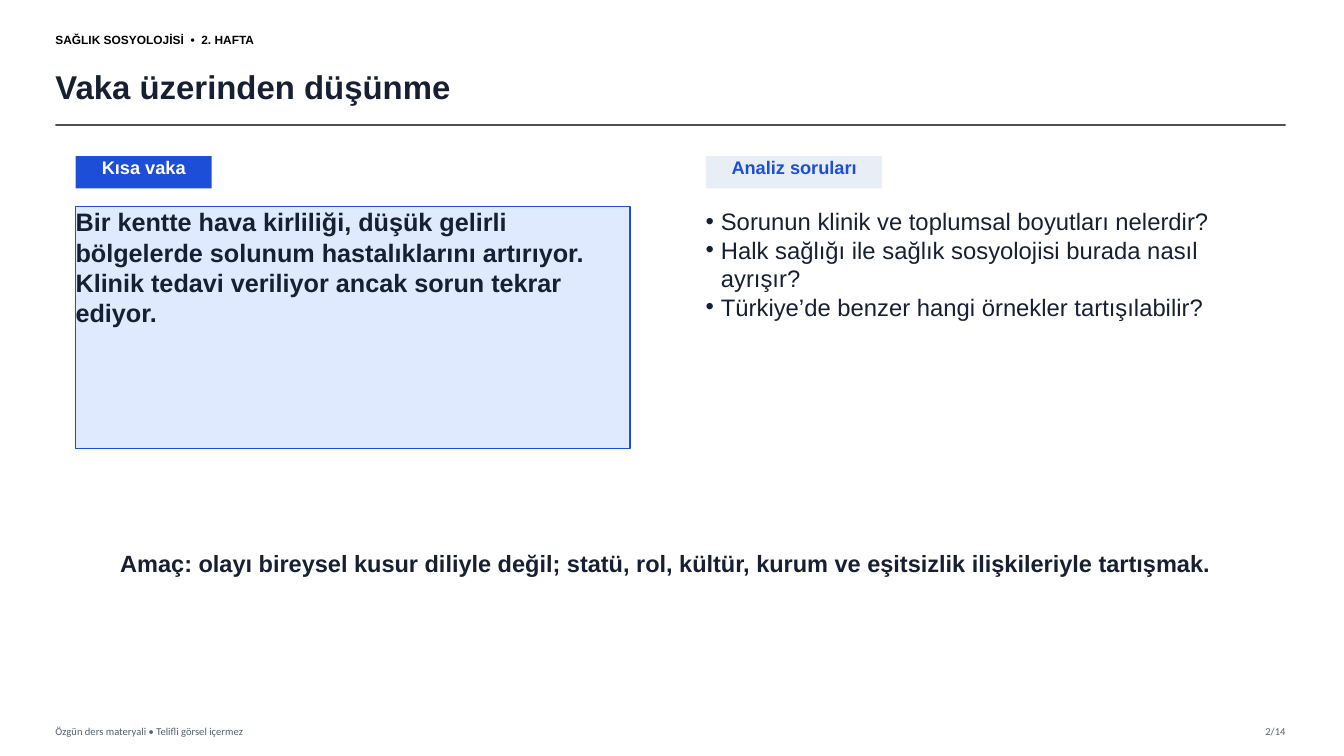
from lxml import etree
from pptx import Presentation
from pptx import util as u
from pptx.dml.color import RGBColor
from pptx.enum import shapes, text
from pptx.oxml import ns


class Theme:
    heading_font, footer_font = "Arial", "Calibri"
    black, ink, slate, rule = "000000", "172033", "506070", "333333"
    blue, pale_blue, mist, white = "1D4ED8", "DFEAFE", "E8EEF5", "FFFFFF"
    kicker, title, footer = 8.5, 23.5, 7.5
    label, case, question, goal = 13, 18, 17, 16.8


LEFT, CENTER, RIGHT = text.PP_ALIGN.LEFT, text.PP_ALIGN.CENTER, text.PP_ALIGN.RIGHT
TOP, MIDDLE = text.MSO_ANCHOR.TOP, text.MSO_ANCHOR.MIDDLE

deck = Presentation()
deck.slide_width, deck.slide_height = u.Inches(13.33), u.Inches(7.5)
slide = deck.slides.add_slide(deck.slide_layouts[6])
slide.background.fill.solid()
slide.background.fill.fore_color.rgb = RGBColor.from_string(Theme.white)


def write(holder, wording, size, color, bold=False, align=LEFT, anchor=TOP,
          font=Theme.heading_font):
    frame = holder.text_frame
    frame.text = wording
    frame.word_wrap = True
    frame.vertical_anchor = anchor
    frame.margin_left = frame.margin_right = frame.margin_top = frame.margin_bottom = 0
    for paragraph in frame.paragraphs:
        paragraph.alignment = align
        for run in paragraph.runs:
            run.font.name = font
            run.font.size = u.Pt(size)
            run.font.bold = bold
            run.font.color.rgb = RGBColor.from_string(color)


def add_panel(box, fill, outline=None):
    panel = slide.shapes.add_shape(shapes.MSO_SHAPE.RECTANGLE, *map(u.Inches, box))
    panel.shadow.inherit = False
    panel.fill.solid()
    panel.fill.fore_color.rgb = RGBColor.from_string(fill)
    if outline:
        panel.line.color.rgb = RGBColor.from_string(outline)
        panel.line.width = u.Pt(1)
    else:
        panel.line.fill.background()
    return panel


furniture = [
    ((0.55, 0.25, 3.6, 0.28), "SAĞLIK SOSYOLOJİSİ  •  2. HAFTA",
     Theme.kicker, Theme.black, True, LEFT, Theme.heading_font),
    ((0.55, 0.58, 11.95, 0.55), "Vaka üzerinden düşünme",
     Theme.title, Theme.ink, True, LEFT, Theme.heading_font),
    ((0.55, 7.14, 6, 0.22), "Özgün ders materyali • Telifli görsel içermez",
     Theme.footer, Theme.slate, False, LEFT, Theme.footer_font),
    ((12.1, 7.14, 0.65, 0.22), "2/14",
     Theme.footer, Theme.slate, False, RIGHT, Theme.footer_font),
]
for box, wording, size, color, bold, align, font in furniture:
    write(slide.shapes.add_textbox(*map(u.Inches, box)), wording, size, color,
          bold, align, MIDDLE, font)

title_rule = slide.shapes.add_connector(
    shapes.MSO_CONNECTOR.STRAIGHT, *map(u.Inches, (0.55, 1.24, 12.75, 1.24)))
title_rule.line.color.rgb = RGBColor.from_string(Theme.rule)
title_rule.line.width = u.Pt(1.2)
rule_properties = title_rule.element.spPr
rule_color = next(rule_properties.iter(ns.qn("a:srgbClr")))
etree.SubElement(rule_color, ns.qn("a:alpha"), val="85000")
etree.SubElement(rule_properties, ns.qn("a:effectLst"))

column_labels = [
    (0.75, 1.35, "Kısa vaka", Theme.blue, Theme.white),
    (7, 1.75, "Analiz soruları", Theme.mist, Theme.blue),
]
for left, width, wording, fill, color in column_labels:
    write(add_panel((left, 1.55, width, 0.32), fill), wording,
          Theme.label, color, True, CENTER)

case_panel = add_panel((0.75, 2.05, 5.5, 2.4), Theme.pale_blue, Theme.blue)
write(case_panel,
      "Bir kentte hava kirliliği, düşük gelirli bölgelerde solunum hastalıklarını "
      "artırıyor. Klinik tedavi veriliyor ancak sorun tekrar ediyor.",
      Theme.case, Theme.ink, True)

questions = slide.shapes.add_textbox(*map(u.Inches, (7, 2.05, 5.4, 2.65)))
write(questions, "\n".join([
    "Sorunun klinik ve toplumsal boyutları nelerdir?",
    "Halk sağlığı ile sağlık sosyolojisi burada nasıl ayrışır?",
    "Türkiye’de benzer hangi örnekler tartışılabilir?",
]), Theme.question, Theme.ink)
bullet_indent = u.Inches(0.15)
for question in questions.text_frame.paragraphs:
    properties = question._p.get_or_add_pPr()
    properties.set("marL", str(bullet_indent))
    properties.set("indent", str(-bullet_indent))
    etree.SubElement(properties, ns.qn("a:buFont"), typeface=Theme.heading_font)
    etree.SubElement(properties, ns.qn("a:buChar"), char="•")

goal = slide.shapes.add_textbox(*map(u.Inches, (1.05, 5.45, 11.1, 0.6)))
write(goal,
      "Amaç: olayı bireysel kusur diliyle değil; statü, rol, kültür, kurum ve "
      "eşitsizlik ilişkileriyle tartışmak.",
      Theme.goal, Theme.ink, True, CENTER)

deck.save("out.pptx")
